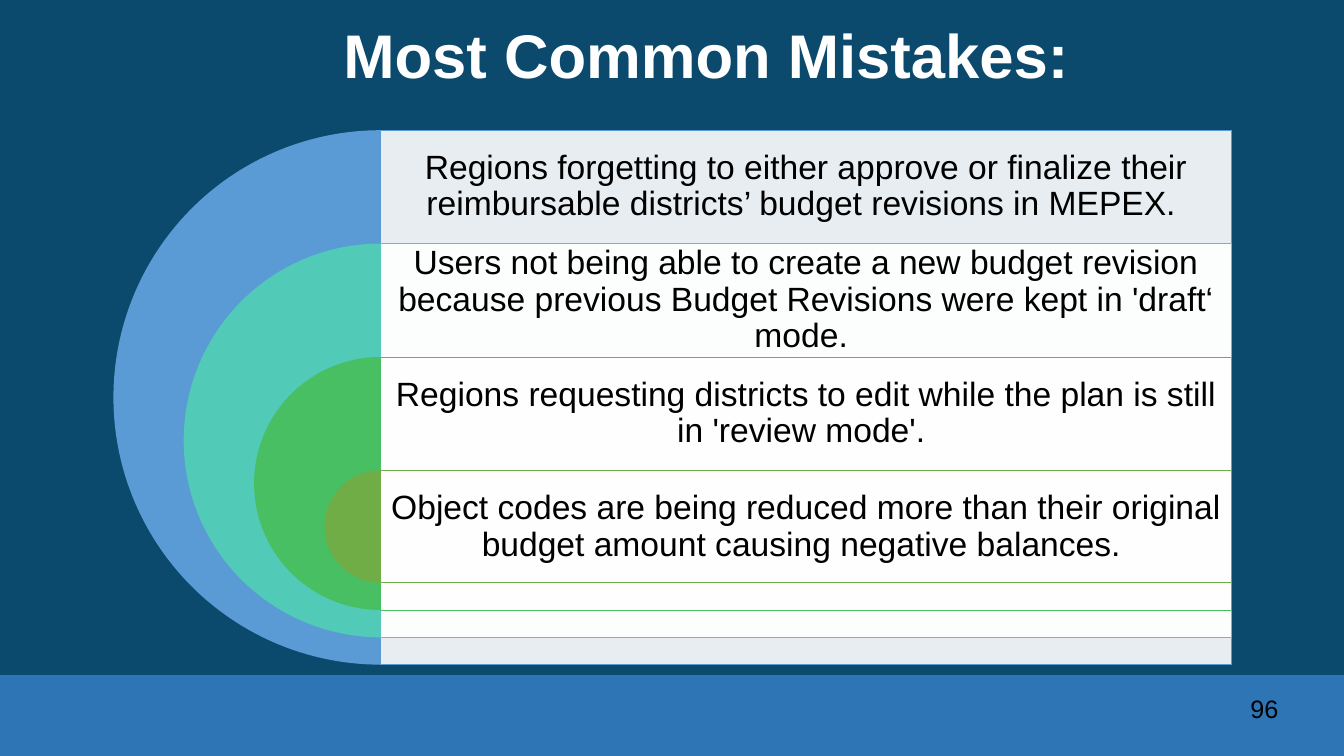
from dataclasses import dataclass

import pptx
import pptx.util
from lxml import etree
from pptx.dml.color import RGBColor
from pptx.enum.shapes import MSO_SHAPE
from pptx.enum.text import MSO_ANCHOR, MSO_AUTO_SIZE, PP_ALIGN
from pptx.oxml.ns import qn
from pptx.shapes.autoshape import Shape
from pptx.slide import Slide
from pptx.text.text import TextFrame

EMU_PER_PX = 9525
SLIDE_WIDTH, SLIDE_HEIGHT = 1280, 720
FOOTER_TOP = 643

PANEL_LEFT, PANEL_WIDTH = 362, 811
FIRST_TOP, BAND_HEIGHT = 124, 108
OUTER_DIAMETER, DIAMETER_STEP = 509, 134


@dataclass(frozen=True)
class Theme:
    font: str = "Arial"
    background: str = "0C4A6D"
    footer: str = "2E75B6"
    panel: str = "FFFFFF"
    panel_opacity: int = 90
    title: str = "FFFFFF"
    text: str = "000000"
    title_size: int = 44
    body_size: int = 24
    number_size: int = 18
    panel_line: float = 0.5
    line_spacing: float = 0.9


@dataclass(frozen=True)
class Mistake:
    text: str
    color: str


THEME = Theme()
MISTAKES = [
    Mistake("Regions forgetting to either approve or finalize their reimbursable "
            "districts’ budget revisions in MEPEX. ", "5B9BD5"),
    Mistake("Users not being able to create a new budget revision because previous "
            "Budget Revisions were kept in 'draft‘ mode. ", "52CAB8"),
    Mistake("Regions requesting districts to edit while the plan is still in "
            "'review mode'. ", "49BF64"),
    Mistake("Object codes are being reduced more than their original budget amount "
            "causing negative balances. ", "70AD47"),
]


def px(length: int) -> pptx.util.Emu:
    return pptx.util.Emu(length * EMU_PER_PX)


def write_text(frame: TextFrame, text: str, size: int, color: str,
               alignment: PP_ALIGN, bold: bool = False) -> None:
    frame.word_wrap = True
    frame.auto_size = MSO_AUTO_SIZE.NONE
    frame.text = text
    paragraph = frame.paragraphs[0]
    paragraph.alignment = alignment
    paragraph.line_spacing = THEME.line_spacing
    paragraph.font.name = THEME.font
    paragraph.font.size = pptx.util.Pt(size)
    paragraph.font.bold = bold
    paragraph.font.color.rgb = RGBColor.from_string(color)


def add_filled_shape(slide: Slide, kind: MSO_SHAPE, left: int, top: int,
                     width: int, height: int, color: str) -> Shape:
    shape = slide.shapes.add_shape(kind, px(left), px(top), px(width), px(height))
    shape.shadow.inherit = False
    shape.fill.solid()
    shape.fill.fore_color.rgb = RGBColor.from_string(color)
    shape.line.fill.background()
    return shape


def set_opacity(shape: Shape, percent: int) -> None:
    color = shape.fill._xPr.find(qn("a:solidFill"))[0]
    etree.SubElement(color, qn("a:alpha")).set("val", str(percent * 1000))


def add_mistake(slide: Slide, index: int, mistake: Mistake) -> None:
    """Draw one half circle, its panel and the text in the panel's top band."""
    top = FIRST_TOP + index * BAND_HEIGHT
    diameter = OUTER_DIAMETER - index * DIAMETER_STEP

    half_circle = add_filled_shape(slide, MSO_SHAPE.PIE, PANEL_LEFT - diameter // 2,
                                   top, diameter, diameter, mistake.color)
    half_circle.adjustments[0] = 54
    half_circle.adjustments[1] = 162

    panel = add_filled_shape(slide, MSO_SHAPE.RECTANGLE, PANEL_LEFT, top,
                             PANEL_WIDTH, diameter, THEME.panel)
    set_opacity(panel, THEME.panel_opacity)
    panel.line.color.rgb = RGBColor.from_string(mistake.color)
    panel.line.width = pptx.util.Pt(THEME.panel_line)

    label = slide.shapes.add_textbox(px(PANEL_LEFT), px(top),
                                     px(PANEL_WIDTH), px(BAND_HEIGHT))
    frame = label.text_frame
    frame.margin_left = frame.margin_right = px(10)
    frame.margin_top = frame.margin_bottom = px(10)
    frame.vertical_anchor = MSO_ANCHOR.MIDDLE
    write_text(frame, mistake.text, THEME.body_size, THEME.text, PP_ALIGN.CENTER)


def add_title(slide: Slide) -> None:
    title = slide.shapes.title
    title.left, title.top = px(201), px(-36)
    title.width, title.height = px(960), px(184)
    title.text_frame.vertical_anchor = MSO_ANCHOR.MIDDLE
    write_text(title.text_frame, "Most Common Mistakes: ", THEME.title_size,
               THEME.title, PP_ALIGN.CENTER, bold=True)


def add_page_number(slide: Slide) -> None:
    number = slide.shapes.add_textbox(px(993), px(656), px(234), px(48))
    write_text(number.text_frame, "96", THEME.number_size, THEME.text, PP_ALIGN.RIGHT)
    number.text_frame.paragraphs[0].line_spacing = 1.0


def main() -> None:
    presentation = pptx.Presentation()
    presentation.slide_width = px(SLIDE_WIDTH)
    presentation.slide_height = px(SLIDE_HEIGHT)
    slide = presentation.slides.add_slide(presentation.slide_layouts[5])
    slide.background.fill.solid()
    slide.background.fill.fore_color.rgb = RGBColor.from_string(THEME.background)

    add_filled_shape(slide, MSO_SHAPE.RECTANGLE, 0, FOOTER_TOP, SLIDE_WIDTH,
                     SLIDE_HEIGHT - FOOTER_TOP, THEME.footer)
    add_title(slide)
    for index, mistake in enumerate(MISTAKES):
        add_mistake(slide, index, mistake)
    add_page_number(slide)
    presentation.save("out.pptx")


if __name__ == "__main__":
    main()
